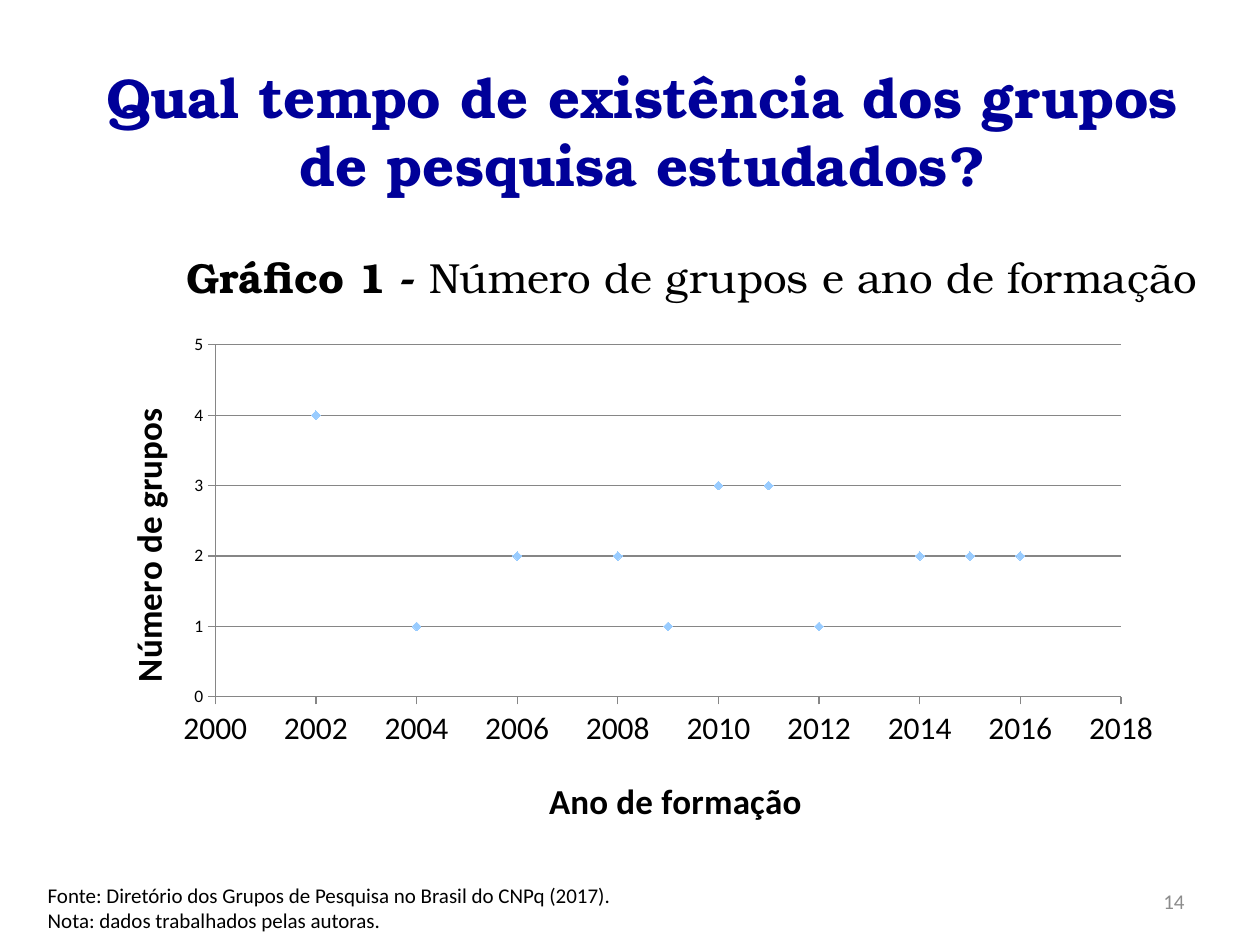
import pptx
import pptx.chart.data
import pptx.dml.color
import pptx.enum.chart
import pptx.enum.text
import pptx.oxml
import pptx.oxml.ns
import pptx.util

WIDTH, HEIGHT = 10, 7.5
NAVY = pptx.dml.color.RGBColor(0x00, 0x00, 0x99)
BLACK = pptx.dml.color.RGBColor(0x00, 0x00, 0x00)
GRAY = pptx.dml.color.RGBColor(0x8C, 0x8C, 0x8C)
AXIS_GRAY = pptx.dml.color.RGBColor(0x86, 0x86, 0x86)
SKY = pptx.dml.color.RGBColor(0x99, 0xCC, 0xFF)
SERIF, SANS = "TeX Gyre Bonum", "Calibri"
GROUPS_BY_YEAR = {2002: 4, 2004: 1, 2006: 2, 2008: 2, 2009: 1, 2010: 3,
                  2011: 3, 2012: 1, 2014: 2, 2015: 2, 2016: 2}


def place(left, top, width, height):
    """Turn shares of the slide's size into lengths."""
    return [pptx.util.Inches(share * side) for share, side in
            zip((left, top, width, height), (WIDTH, HEIGHT) * 2)]


def style_font(font, size, color=BLACK, name=SANS, bold=False):
    font.size = pptx.util.Pt(size)
    font.color.rgb = color
    font.name = name
    font.bold = bold


def add_text(page, shares, spans, size, align=pptx.enum.text.PP_ALIGN.LEFT,
             anchor=pptx.enum.text.MSO_ANCHOR.TOP, **style):
    """Add a one-paragraph box; spans are (text, bold) pairs."""
    frame = page.shapes.add_textbox(*place(*shares)).text_frame
    frame.word_wrap = True
    frame.vertical_anchor = anchor
    para = frame.paragraphs[0]
    para.alignment = align
    style_font(para.font, size, **style)
    for position, (text, bold) in enumerate(spans):
        lines = text.split("\n")
        for number, line in enumerate(lines):
            if number:
                para.add_line_break()
            span = para.add_run()
            span.text = line
            style_font(span.font, size, bold=bold, **style)
    return para


def set_layout(element, index, target="", **shares):
    """Fix a chart part's place, in shares of the chart's size."""
    for old in element.findall(pptx.oxml.ns.qn("c:layout")):
        element.remove(old)
    modes = "".join(f'<c:{axis}Mode val="edge"/>' for axis in "xy")
    sizes = "".join(f'<c:{key} val="{value}"/>' for key, value in shares.items())
    element.insert(index, pptx.oxml.parse_xml(
        f'<c:layout {pptx.oxml.ns.nsdecls("c")}><c:manualLayout>'
        f'{target}{modes}{sizes}</c:manualLayout></c:layout>'))


def style_axis(axis, title, low, high, step, label_size, x, y):
    axis.minimum_scale, axis.maximum_scale, axis.major_unit = low, high, step
    axis.major_tick_mark = pptx.enum.chart.XL_TICK_MARK.OUTSIDE
    axis.minor_tick_mark = pptx.enum.chart.XL_TICK_MARK.NONE
    axis.format.line.color.rgb = AXIS_GRAY
    axis.format.line.width = pptx.util.Pt(0.75)
    style_font(axis.tick_labels.font, label_size)
    axis.tick_labels.number_format = "General"
    axis.tick_labels.number_format_is_linked = False
    para = axis.axis_title.text_frame.paragraphs[0]
    span = para.add_run()
    span.text = title
    style_font(span.font, 20, bold=True)
    set_layout(axis.axis_title._element, 1, x=x, y=y)


def add_scatter(page, shares):
    data = pptx.chart.data.XyChartData()
    series_data = data.add_series("Series 1")
    for year, groups in GROUPS_BY_YEAR.items():
        series_data.add_data_point(year, groups)
    chart = page.shapes.add_chart(
        pptx.enum.chart.XL_CHART_TYPE.XY_SCATTER, *place(*shares), data).chart
    chart.has_legend = chart.has_title = False
    style_font(chart.font, 10)
    plot = chart.plots[0]
    plot.vary_by_categories = False

    style_axis(chart.category_axis, "Ano de formação", 2000, 2018, 2, 18, 0.42, 0.86)
    style_axis(chart.value_axis, "Número de grupos", 0, 5, 1, 10, 0.03, 0.15)
    chart.category_axis.has_major_gridlines = False
    chart.value_axis.has_major_gridlines = True
    grid = chart.value_axis.major_gridlines.format.line
    grid.color.rgb = AXIS_GRAY
    grid.width = pptx.util.Pt(0.75)

    series = plot.series[0]
    series.format.line.fill.background()
    series.marker.style = pptx.enum.chart.XL_MARKER_STYLE.DIAMOND
    series.marker.size = 5
    series.marker.format.fill.solid()
    series.marker.format.fill.fore_color.rgb = SKY
    series.marker.format.line.color.rgb = SKY

    plot_area = chart._chartSpace.find(".//" + pptx.oxml.ns.qn("c:plotArea"))
    set_layout(plot_area, 0, '<c:layoutTarget val="inner"/>',
               x=0.12, y=0.04, w=0.83, h=0.68)


def main():
    deck = pptx.Presentation()
    deck.slide_width = pptx.util.Inches(WIDTH)
    deck.slide_height = pptx.util.Inches(HEIGHT)
    page = deck.slides.add_slide(deck.slide_layouts[6])
    align = pptx.enum.text.PP_ALIGN

    heading = add_text(
        page, (0, 0.06, 0.97, 0.16),
        [("Qual tempo de existência dos grupos de pesquisa estudados?", True)],
        32, align.CENTER, color=NAVY, name=SERIF)
    heading._p.get_or_add_pPr().set("marL", str(pptx.util.Inches(0.5)))
    add_scatter(page, (0.067, 0.343, 0.866, 0.548))
    add_text(page, (0.138, 0.26, 0.862, 0.12),
             [("Gráfico 1 -", True), (" Número de grupos e ano de formação", False)],
             24, name=SERIF)
    add_text(page, (0.028, 0.927, 0.972, 0.067),
             [("Fonte: Diretório dos Grupos de Pesquisa no Brasil do CNPq (2017).\n"
               "Nota: dados trabalhados pelas autoras.", False)], 12)
    add_text(page, (0.717, 0.927, 0.233, 0.053), [("14", False)], 12, align.RIGHT,
             pptx.enum.text.MSO_ANCHOR.MIDDLE, color=GRAY)
    deck.save("out.pptx")


if __name__ == "__main__":
    main()
